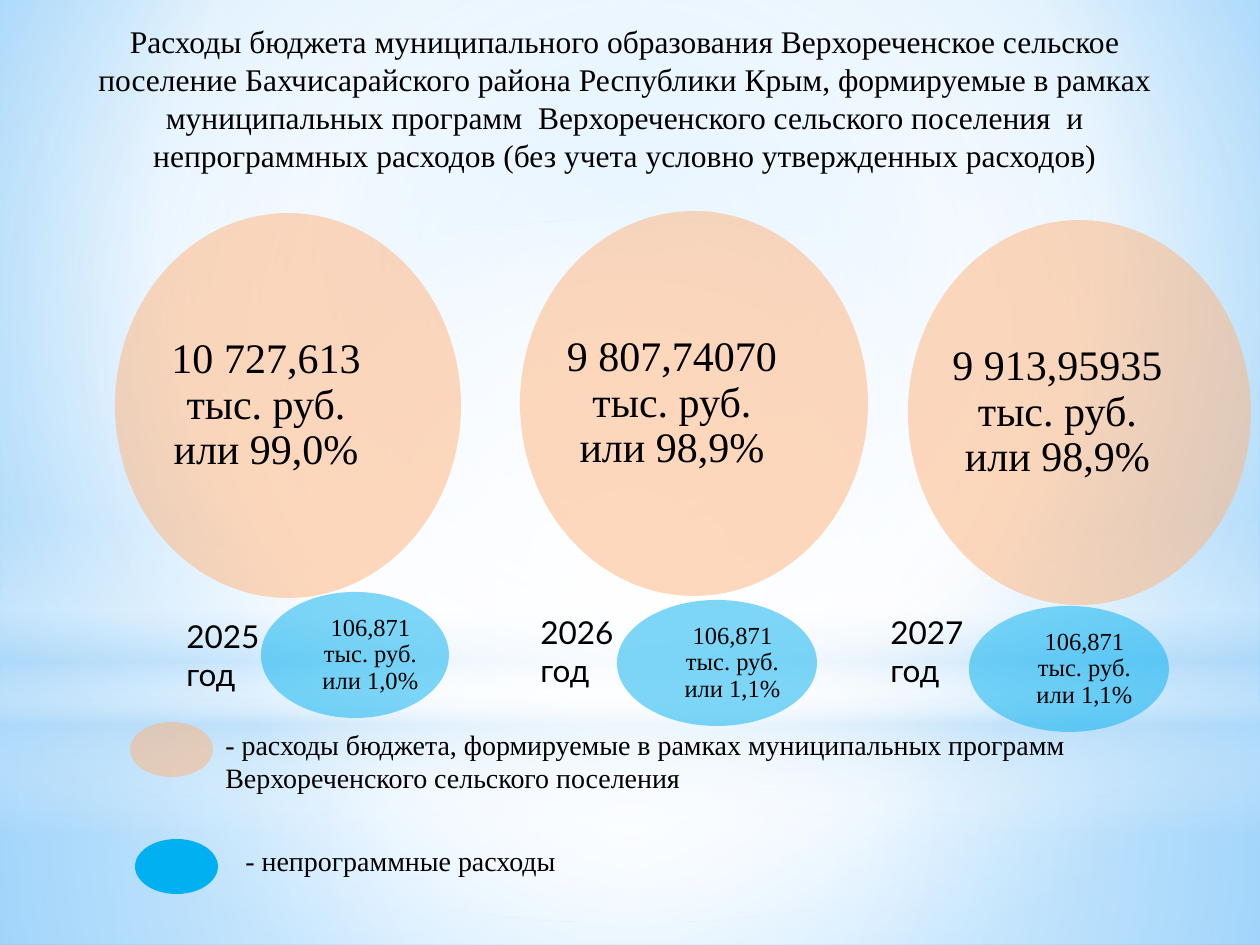
from pptx import Presentation
from pptx.dml.color import RGBColor
from pptx.enum.shapes import MSO_SHAPE as Shape
from pptx.enum.text import MSO_ANCHOR as Anchor, MSO_AUTO_SIZE as AutoSize, PP_ALIGN as Align
from pptx.oxml import parse_xml
from pptx.oxml.ns import nsdecls, qn
from pptx.util import Emu, Pt

PX = 914400 // 126  # the slide is 1260 x 945 px
SERIF, SANS = "Times New Roman", "Lato"
PEACH, BLUE, BLACK = "FFB37A", "00B0F0", "000000"

# Background panels: preset, box, gradient stops (position, colour, opacity), focus
CENTRE = (50, 50, 50, 50)
BACKDROP = [(0, "9ED5FF", 100), (60, "FFFFFF", 100), (100, "5BB9FF", 100)]
PANELS = [
    (Shape.RECTANGLE, (0, 703, 1260, 242),
     [(0, "FFFFFF", 91), (37, "FFFFFF", 76), (100, "B4DCFA", 79)], CENTRE),
    (Shape.RECTANGLE, (0, 0, 1260, 703),
     [(0, "FFFFFF", 89), (48, "FFFFFF", 62), (100, "B4DCFA", 79)], CENTRE),
    (Shape.RECTANGLE, (0, 519, 1260, 315),
     [(0, "FFFFFF", 0), (29, "FFFFFF", 30), (45, "B4DCFA", 40),
      (55, "FFFFFF", 26), (65, "B4DCFA", 60), (100, "FFFFFF", 0)], None),
    (Shape.OVAL, (0, 220, 1260, 703),
     [(0, "FFFFFF", 100), (56, "FFFFFF", 0)], CENTRE),
]

TITLE = ("Расходы бюджета муниципального образования Верхореченское сельское "
         "поселение Бахчисарайского района Республики Крым, формируемые в рамках "
         "муниципальных программ  Верхореченского сельского поселения  и "
         "непрограммных расходов (без учета условно утвержденных расходов)")

# Year, its box, programme spending and box, other spending and box
YEARS = [
    ("2025 год", (174, 611, 139, 89),
     "10 727,613 тыс. руб. или 99,0%", (115, 213, 346, 385),
     "106,871 тыс. руб. или 1,0%", (261, 592, 188, 126)),
    ("2026 год", (528, 607, 102, 89),
     "9 807,74070 тыс. руб. или 98,9%", (520, 211, 348, 385),
     "106,871 тыс. руб. или 1,1%", (617, 600, 200, 126)),
    ("2027 год", (878, 607, 139, 89),
     "9 913,95935 тыс. руб. или 98,9%", (908, 220, 343, 385),
     "106,871 тыс. руб. или 1,1%", (969, 606, 200, 126)),
]

# Legend: colour, opacity, marker box, label, label box
LEGEND = [
    (PEACH, 50, (130, 722, 83, 55),
     "- расходы бюджета, формируемые в рамках муниципальных программ "
     "Верхореченского сельского поселения", (213, 721, 973, 81)),
    (BLUE, 100, (135, 839, 83, 55),
     "- непрограммные расходы", (233, 837, 853, 47)),
]


def px(*lengths):
    return [Emu(length * PX) for length in lengths]


def rgb(colour):
    return RGBColor.from_string(colour)


def set_values(target, values):
    for name, value in values.items():
        setattr(target, name, value)


def write_text(shape, text, size, font=SERIF, align=Align.LEFT, spacing=1.0,
               anchor=Anchor.TOP, margins=None):
    frame = shape.text_frame
    set_values(frame, {"text": text, "word_wrap": True, "auto_size": AutoSize.NONE,
                       "vertical_anchor": anchor})
    if margins:
        sides = ("margin_left", "margin_top", "margin_right", "margin_bottom")
        set_values(frame, dict(zip(sides, px(*margins))))
    paragraph = frame.paragraphs[0]
    set_values(paragraph, {"alignment": align, "line_spacing": spacing})
    run_font = paragraph.runs[0].font
    set_values(run_font, {"name": font, "size": Pt(size)})
    run_font.color.rgb = rgb(BLACK)


def add_label(slide, box, text, size, font=SERIF):
    write_text(slide.shapes.add_textbox(*px(*box)), text, size, font)


def add_plain_shape(slide, preset, box):
    shape = slide.shapes.add_shape(preset, *px(*box))
    shape.shadow.inherit = False
    shape.line.fill.background()
    return shape


def add_oval(slide, box, colour, opacity):
    oval = add_plain_shape(slide, Shape.OVAL, box)
    oval.fill.solid()
    oval.fill.fore_color.rgb = rgb(colour)
    if opacity < 100:
        colour_element = oval._element.spPr.find(".//" + qn("a:srgbClr"))
        colour_element.append(parse_xml(
            f'<a:alpha {nsdecls("a")} val="{opacity * 1000}"/>'))
    return oval


def fill_gradient(fill, element, stops, focus):
    """Radial gradient around focus, or a downward one when focus is None."""
    fill.gradient()
    stop_xml = "".join(
        f'<a:gs pos="{position * 1000}"><a:srgbClr val="{colour}">'
        f'<a:alpha val="{opacity * 1000}"/></a:srgbClr></a:gs>'
        for position, colour, opacity in stops)
    if focus:
        edges = " ".join(f'{side}="{value * 1000}"' for side, value in zip("ltrb", focus))
        direction = f'<a:path path="circle"><a:fillToRect {edges}/></a:path>'
    else:
        direction = '<a:lin ang="5400000" scaled="0"/>'
    default = element.find(".//" + qn("a:gradFill"))
    default.getparent().replace(default, parse_xml(
        f'<a:gradFill {nsdecls("a")} rotWithShape="1"><a:gsLst>{stop_xml}</a:gsLst>'
        f'{direction}</a:gradFill>'))


def add_background(slide):
    fill_gradient(slide.background.fill, slide._element, BACKDROP, (20, 10, 20, 60))
    layout_tree = slide.slide_layout.shapes._spTree
    for index, (preset, box, stops, focus) in enumerate(PANELS):
        panel = add_plain_shape(slide, preset, box)
        fill_gradient(panel.fill, panel._element, stops, focus)
        layout_tree.insert(2 + index, panel._element)  # panels belong to the layout


def add_title(slide):
    title = slide.shapes.title
    box = px(54, 16, 1142, 165)
    set_values(title, dict(zip(("left", "top", "width", "height"), box)))
    write_text(title, TITLE, 18, align=Align.CENTER)


def add_value_oval(slide, box, colour, text, size, margins):
    oval = add_oval(slide, box, colour, 50)
    write_text(oval, text, size, align=Align.CENTER, spacing=0.9,
               anchor=Anchor.MIDDLE, margins=margins)


def main():
    presentation = Presentation()
    presentation.slide_width, presentation.slide_height = px(1260, 945)
    slide = presentation.slides.add_slide(presentation.slide_layouts[5])

    add_background(slide)
    add_title(slide)

    # Spending by year
    for year, year_box, programme, programme_box, other, other_box in YEARS:
        add_value_oval(slide, programme_box, PEACH, programme, 24, (-8, 0, 36, 0))
        add_value_oval(slide, other_box, BLUE, other, 14, (33, 4, 2, 4))
        add_label(slide, year_box, year, 18, SANS)

    # Legend
    for colour, opacity, marker_box, label, label_box in LEGEND:
        add_oval(slide, marker_box, colour, opacity)
        add_label(slide, label_box, label, 16)

    presentation.save("out.pptx")


if __name__ == "__main__":
    main()
